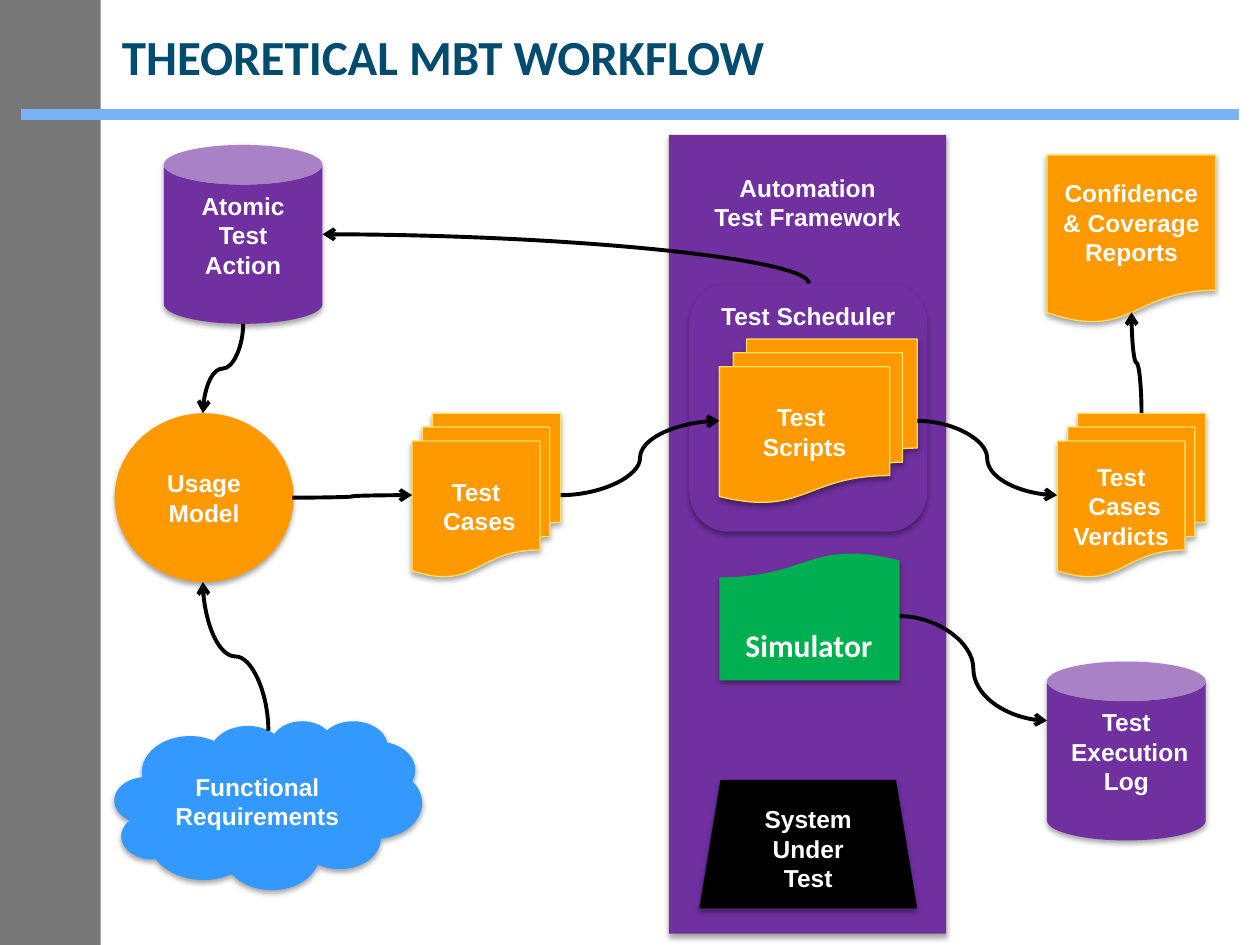
"""Build the theoretical MBT workflow slide."""
from dataclasses import dataclass
from typing import Optional

from lxml import etree
from pptx import Presentation
from pptx import util as u
from pptx.dml.color import RGBColor
from pptx.enum import shapes, text
from pptx.oxml import ns

COLUMNS, ROWS = 100, 75
COLORS = {
    "side": "777777", "rule": "79B2F7", "title": "004B6E", "purple": "7030A0",
    "orange": "FF9900", "edge": "FFE066", "green": "00B050", "blue": "3399FF",
    "black": "000000", "white": "FFFFFF",
}
KIND = shapes.MSO_SHAPE
TOP, MIDDLE = text.MSO_ANCHOR.TOP, text.MSO_ANCHOR.MIDDLE


@dataclass
class Node:
    kind: KIND
    column: float
    row: float
    columns: float
    rows: float
    color: str
    words: str = ""
    anchor: text.MSO_ANCHOR = MIDDLE
    edge: Optional[str] = None
    rotation: float = 0
    inset: float = 0.5


@dataclass
class Arrow:
    start: tuple[float, float]
    end: tuple[float, float]
    vertical: bool = False
    preset: str = "curvedConnector3"


def cylinder(column: float, row: float, words: str) -> Node:
    return Node(KIND.CAN, column, row, 12.6, 14.2, "purple", words, TOP)


def stack(column: float, row: float, columns: float, words: str) -> Node:
    return Node(KIND.FLOWCHART_MULTIDOCUMENT, column, row, columns, 13, "orange", words, edge="edge")


NODES = [
    Node(KIND.RECTANGLE, 53.1, 10.7, 22, 63.4, "purple", "Automation\nTest Framework", TOP, inset=3),
    Node(KIND.FLOWCHART_DOCUMENT, 57.1, 43.8, 14.3, 10.2, "green", rotation=180),
    Node(KIND.ROUNDED_RECTANGLE, 54.7, 22.5, 18.9, 19.7, "purple", "Test Scheduler", TOP),
    Node(KIND.TRAPEZOID, 55.5, 61.9, 17.3, 10.2, "black", "System\nUnder\nTest"),
    cylinder(83.1, 52.5, "Test\n Execution\nLog"),
    Node(KIND.OVAL, 9.1, 32.8, 14.2, 13.4, "orange", "Usage\nModel"),
    stack(32.7, 32.8, 11.8, "Test\n Cases"),
    Node(KIND.CLOUD, 9.1, 57.2, 24.4, 13.4, "blue", "Functional\nRequirements"),
    cylinder(13, 11.5, "Atomic\nTest\nAction"),
    stack(83.9, 32.8, 11.8, "Test\n Cases\nVerdicts"),
    Node(KIND.FLOWCHART_DOCUMENT, 83.1, 12.3, 13.4, 13.4, "orange",
         "Confidence\n& Coverage\nReports", edge="edge"),
    stack(57.1, 26.9, 15.7, "Test \nScripts"),
]
ARROWS = [
    Arrow((71.4, 48.9), (83.1, 57.2)),
    Arrow((21.3, 58), (16.1, 46.2), True),
    Arrow((23.2, 39.5), (32.7, 39.3)),
    Arrow((64.2, 22.5), (25.6, 18.6), True, "curvedConnector2"),
    Arrow((19.3, 25.7), (16.1, 32.8), True),
    Arrow((72.8, 33.4), (83.9, 39.3)),
    Arrow((90.6, 32.8), (89.8, 24.8), True),
    Arrow((44.5, 39.3), (57.1, 33.4)),
]

deck = Presentation()
deck.slide_width, deck.slide_height = u.Inches(10), u.Inches(7.5)
page = deck.slides.add_slide(deck.slide_layouts[6])


def across(columns: float) -> int:
    return round(deck.slide_width * columns / COLUMNS)


def down(rows: float) -> int:
    return round(deck.slide_height * rows / ROWS)


def rgb(name: str) -> RGBColor:
    return RGBColor.from_string(COLORS[name])


def write(box, words: str, size: float, font: str, color: str, align, anchor) -> None:
    frame = box.text_frame
    frame.text = words
    frame.vertical_anchor = anchor
    for para in frame.paragraphs:
        para.alignment = align
        for span in para.runs:
            span.font.size, span.font.name, span.font.bold = u.Pt(size), font, True
            span.font.color.rgb = rgb(color)


def add_label(area: tuple, words: str, size: float, color: str, align, anchor) -> None:
    column, row, columns, rows = area
    box = page.shapes.add_textbox(across(column), down(row), across(columns), down(rows))
    box.text_frame.word_wrap = True
    write(box, words, size, "Calibri", color, align, anchor)


def add_shadow(shape) -> None:
    shape.shadow.inherit = False
    effects = shape.element.spPr.find(ns.qn("a:effectLst"))
    shadow = etree.SubElement(effects, ns.qn("a:outerShdw"), blurRad=str(u.Pt(3.1)),
                              dist=str(u.Pt(1.8)), dir="5400000", rotWithShape="0")
    tint = etree.SubElement(shadow, ns.qn("a:srgbClr"), val=COLORS["black"])
    etree.SubElement(tint, ns.qn("a:alpha"), val="35000")


def add_node(node: Node, shadow: bool = True) -> None:
    shape = page.shapes.add_shape(node.kind, across(node.column), down(node.row),
                                  across(node.columns), down(node.rows))
    shape.rotation = node.rotation
    shape.fill.solid()
    shape.fill.fore_color.rgb = rgb(node.color)
    if node.edge:
        shape.line.color.rgb = rgb(node.edge)
        shape.line.width = u.Pt(0.75)
    else:
        shape.line.fill.background()
    if node.kind == KIND.TRAPEZOID:
        shape.adjustments[0] = 0.165
    shape.shadow.inherit = False
    if shadow:
        add_shadow(shape)
    if node.words:
        shape.text_frame.word_wrap = False
        shape.text_frame.margin_top = down(node.inset)
        write(shape, node.words, 14, "Arial", "white", text.PP_ALIGN.CENTER, node.anchor)


def add_line(kind, start: tuple, end: tuple, color: str, width: float):
    line = page.shapes.add_connector(kind, across(start[0]), down(start[1]),
                                     across(end[0]), down(end[1]))
    line.line.color.rgb = rgb(color)
    line.line.width = u.Pt(width)
    etree.SubElement(line.element.spPr, ns.qn("a:effectLst"))
    return line


def add_arrow(arrow: Arrow) -> None:
    (x1, y1), (x2, y2) = start, end = arrow.start, arrow.end
    rising = y2 < y1
    if arrow.vertical:
        middle_x, middle_y = (x1 + x2) / 2, (y1 + y2) / 2
        half_x, half_y = abs(y2 - y1) / 2, (x1 - x2) / 2 * (1 if rising else -1)
        start = middle_x - half_x, middle_y + half_y
        end = middle_x + half_x, middle_y - half_y
    line = add_line(shapes.MSO_CONNECTOR.CURVE, start, end, "black", 2.25)
    properties = line.element.spPr
    properties.find(ns.qn("a:prstGeom")).set("prst", arrow.preset)
    if arrow.vertical:
        properties.find(ns.qn("a:xfrm")).set("rot", str((270 if rising else 90) * 60000))
    etree.SubElement(properties.find(ns.qn("a:ln")), ns.qn("a:tailEnd"), type="arrow")


def main() -> None:
    add_node(Node(KIND.RECTANGLE, 0, 0, 8, ROWS, "side"), shadow=False)
    add_line(shapes.MSO_CONNECTOR.STRAIGHT, (1.7, 9.1), (98.3, 9.1), "rule", 6)
    add_label((8.7, 1.3, 63, 6.3), "THEORETICAL MBT WORKFLOW", 28, "title",
              text.PP_ALIGN.LEFT, MIDDLE)
    for node in NODES:
        add_node(node)
    add_label((57.9, 49.2, 12.6, 4), "Simulator", 18, "white", text.PP_ALIGN.CENTER, TOP)
    for arrow in ARROWS:
        add_arrow(arrow)
    deck.save("out.pptx")


if __name__ == "__main__":
    main()
